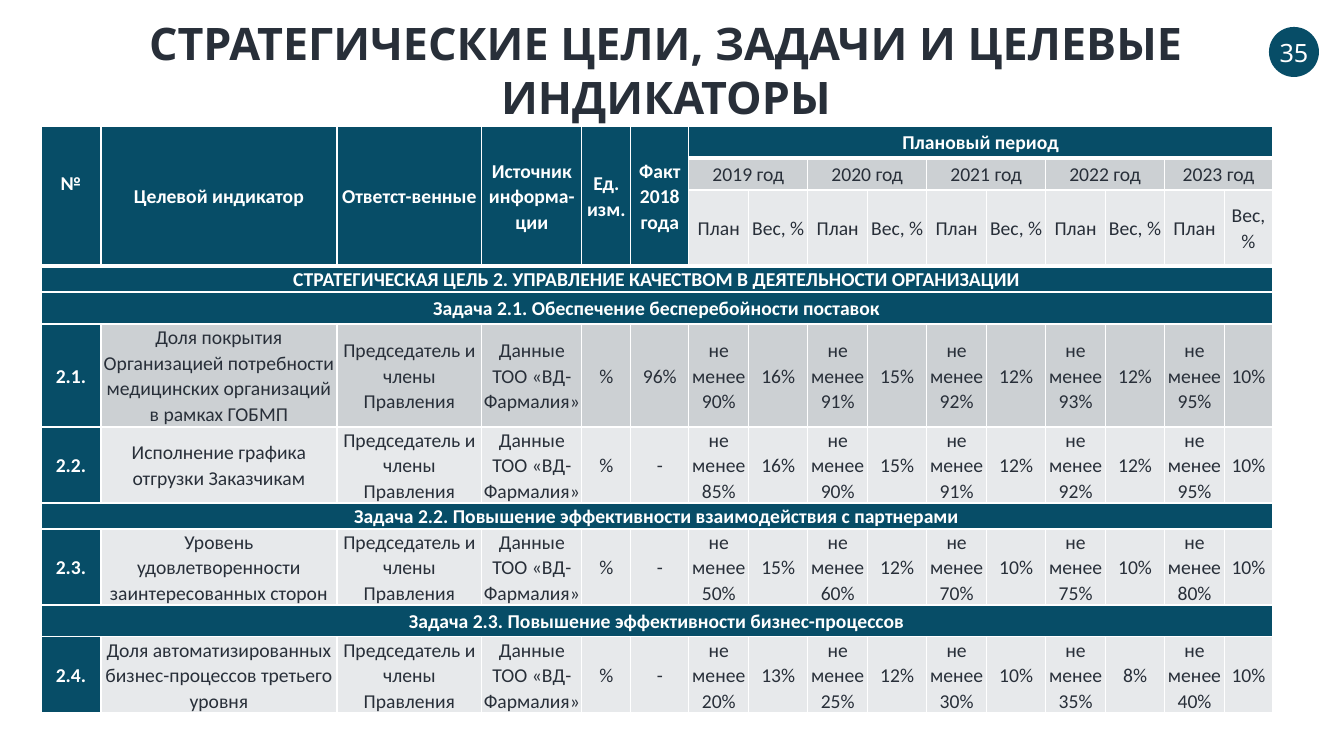
from lxml.etree import SubElement
from pptx import Presentation
from pptx.dml.color import RGBColor
from pptx.enum.shapes import MSO_SHAPE
from pptx.enum.text import MSO_ANCHOR, MSO_AUTO_SIZE, PP_ALIGN
from pptx.oxml.ns import qn
from pptx.util import Pt

PX = 914400 / 100.8
DARK, INK, WHITE = "074D67", "282F39", "FFFFFF"
GREY, LIGHT = "CCD0D3", "E7E9EB"

COLUMN_WIDTHS = [60, 236, 145, 100, 49, 58] + [60, 59] * 4 + [60, 48]
ROW_HEIGHTS = [32, 32, 76, 26, 32, 103, 76, 26, 76, 32, 76]
HEADINGS = ["№", "Целевой индикатор", "Ответст-венные", "Источник информа-ции",
            "Ед. изм.", "Факт 2018 года"]
BANDS = {
    3: "СТРАТЕГИЧЕСКАЯ ЦЕЛЬ 2. УПРАВЛЕНИЕ КАЧЕСТВОМ В ДЕЯТЕЛЬНОСТИ ОРГАНИЗАЦИИ",
    4: "Задача 2.1. Обеспечение бесперебойности поставок",
    7: "Задача 2.2. Повышение эффективности взаимодействия с партнерами",
    9: "Задача 2.3. Повышение эффективности бизнес-процессов",
}
# row: number, indicator, fact, plans and weights for 2019-2023
INDICATORS = {
    5: ("2.1.", "Доля покрытия Организацией потребности медицинских организаций в рамках ГОБМП",
        "96%", [90, 91, 92, 93, 95], [16, 15, 12, 12, 10]),
    6: ("2.2.", "Исполнение графика отгрузки Заказчикам",
        "-", [85, 90, 91, 92, 95], [16, 15, 12, 12, 10]),
    8: ("2.3.", "Уровень удовлетворенности заинтересованных сторон",
        "-", [50, 60, 70, 75, 80], [15, 12, 10, 10, 10]),
    10: ("2.4.", "Доля автоматизированных бизнес-процессов третьего уровня",
         "-", [20, 25, 30, 35, 40], [13, 12, 10, 8, 10]),
}


def px(length):
    return round(length * PX)


def color(value):
    return RGBColor.from_string(value)


presentation = Presentation()
presentation.slide_width, presentation.slide_height = px(1344), px(756)
slide = presentation.slides.add_slide(presentation.slide_layouts[5])

# Table contents
table = slide.shapes.add_table(
    len(ROW_HEIGHTS), len(COLUMN_WIDTHS), px(41), px(126),
    px(sum(COLUMN_WIDTHS)), px(sum(ROW_HEIGHTS))).table
for column, width in zip(table.columns, COLUMN_WIDTHS):
    column.width = px(width)
for row, height in zip(table.rows, ROW_HEIGHTS):
    row.height = px(height)

for column, heading in enumerate(HEADINGS):
    table.cell(0, column).text = heading
    table.cell(0, column).merge(table.cell(2, column))
table.cell(0, 6).text = "Плановый период"
table.cell(0, 6).merge(table.cell(0, 15))
for index in range(5):
    column = 6 + 2 * index
    table.cell(1, column).text = f"{2019 + index} год"
    table.cell(1, column).merge(table.cell(1, column + 1))
    table.cell(2, column).text = "План"
    table.cell(2, column + 1).text = "Вес, %"
for row, band in BANDS.items():
    table.cell(row, 0).text = band
    table.cell(row, 0).merge(table.cell(row, 15))
for row, (number, indicator, fact, plans, weights) in INDICATORS.items():
    texts = [number, indicator, "Председатель и члены Правления",
             "Данные ТОО «ВД-Фармалия»", "%", fact]
    for plan, weight in zip(plans, weights):
        texts += [f"не менее {plan}%", f"{weight}%"]
    for column, text in enumerate(texts):
        table.cell(row, column).text = text

# Table formatting
for row in range(len(ROW_HEIGHTS)):
    for column in range(len(COLUMN_WIDTHS)):
        cell = table.cell(row, column)
        heading = row == 0 or row in BANDS or column == 0 or (row < 3 and column < 6)
        cell.margin_left = cell.margin_right = px(1)
        cell.margin_top = cell.margin_bottom = 0
        cell.vertical_anchor = MSO_ANCHOR.MIDDLE
        paragraph = cell.text_frame.paragraphs[0]
        paragraph.alignment = PP_ALIGN.CENTER
        paragraph.line_spacing = 1.07
        paragraph.font.name = "Calibri"
        paragraph.font.size = Pt(14)
        paragraph.font.bold = heading
        paragraph.font.color.rgb = color(WHITE if heading else INK)
        properties = cell._tc.get_or_add_tcPr()
        thick_bottom = row == 0 or (row == 2 and column < 6)
        for side in ("lnL", "lnR", "lnT", "lnB"):
            points = 3 if side == "lnB" and thick_bottom else 1
            line = SubElement(properties, qn(f"a:{side}"), w=str(Pt(points)))
            fill = SubElement(line, qn("a:solidFill"))
            SubElement(fill, qn("a:srgbClr"), val=WHITE)
        cell.fill.solid()
        body_fill = GREY if row in (1, 5) else LIGHT
        cell.fill.fore_color.rgb = color(DARK if heading else body_fill)
table.cell(0, 0).margin_bottom = px(26)

# Title
title = slide.shapes.title
title.left, title.top, title.width, title.height = px(72), px(11), px(1188), px(65)
title.text_frame.text = "СТРАТЕГИЧЕСКИЕ ЦЕЛИ, ЗАДАЧИ И ЦЕЛЕВЫЕ ИНДИКАТОРЫ"
title.text_frame.word_wrap = True
title.text_frame.auto_size = MSO_AUTO_SIZE.SHAPE_TO_FIT_TEXT
title.text_frame.vertical_anchor = MSO_ANCHOR.TOP
paragraph = title.text_frame.paragraphs[0]
paragraph.alignment = PP_ALIGN.CENTER
paragraph.font.name = "Noto Sans"
paragraph.font.size = Pt(32)
paragraph.font.bold = True
paragraph.font.color.rgb = color(INK)

# Page number
badge = slide.shapes.add_shape(MSO_SHAPE.OVAL, px(1269), px(27), px(50), px(50))
badge.shadow.inherit = False
badge.fill.solid()
badge.fill.fore_color.rgb = color(DARK)
badge.line.fill.background()
badge.text_frame.text = "35"
badge.text_frame.word_wrap = False
badge.text_frame.vertical_anchor = MSO_ANCHOR.MIDDLE
paragraph = badge.text_frame.paragraphs[0]
paragraph.alignment = PP_ALIGN.CENTER
paragraph.font.name = "Noto Sans"
paragraph.font.size = Pt(18)
paragraph.font.color.rgb = color(WHITE)

presentation.save("out.pptx")
